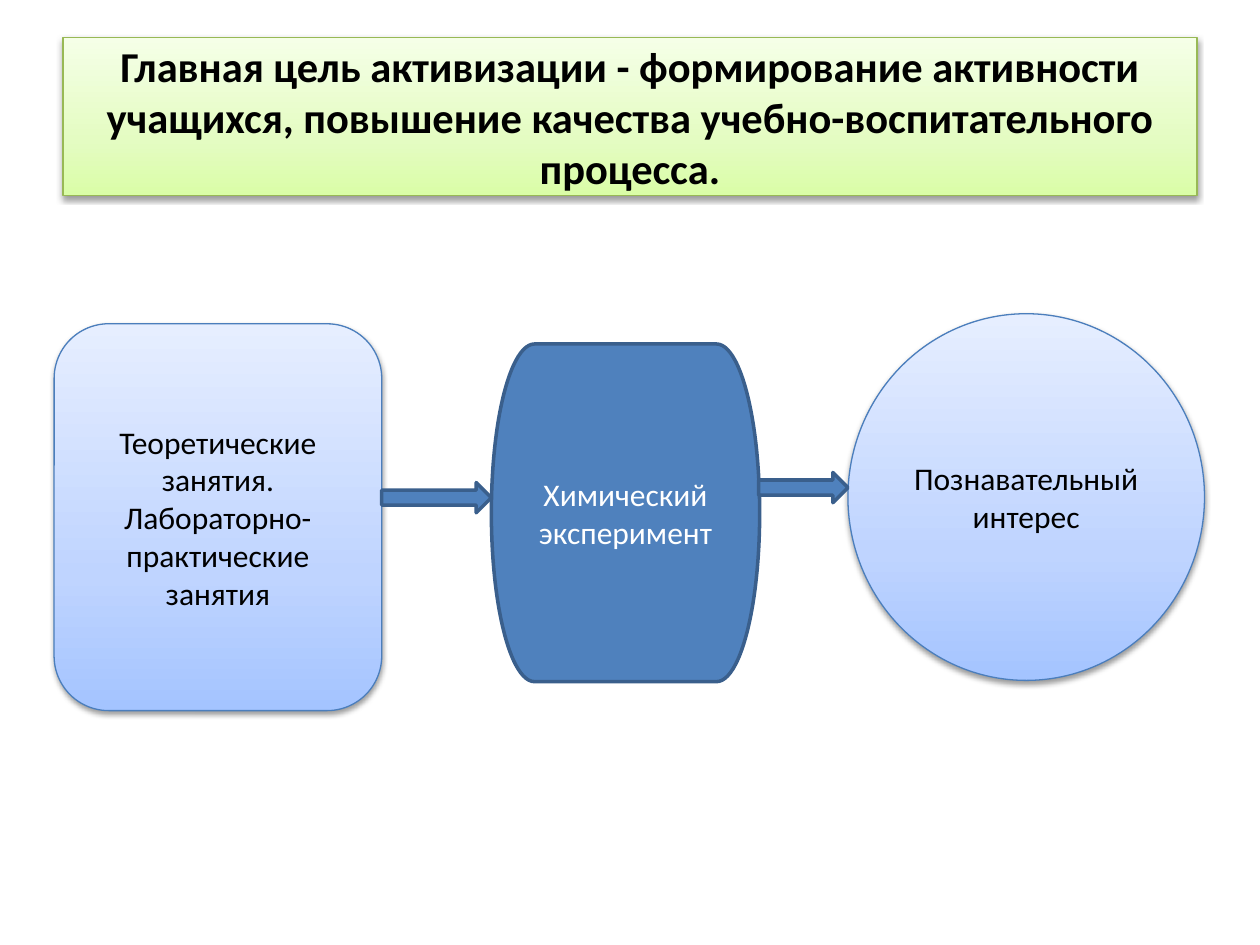
from lxml.etree import SubElement
from pptx import Presentation
from pptx.dml.color import RGBColor
from pptx.enum.shapes import MSO_SHAPE as SHAPE
from pptx.enum.text import MSO_ANCHOR, MSO_AUTO_SIZE, PP_ALIGN
from pptx.oxml.ns import qn
from pptx.util import Inches, Pt

COLORS = {
    "black": "000000", "white": "FFFFFF",
    "blue": "4F81BD", "blue_edge": "3A5F8C",
    "soft_edge": "4B7EBC", "green_edge": "98B955",
}
# Gradient stops, from the bottom edge to the top
GRADIENTS = {
    "blue": ((0, "A4C4FF"), (35, "BFD4FF"), (100, "E6EEFF")),
    "green": ((0, "DAFDA7"), (35, "E4FCC2"), (100, "F5FFE7")),
}


def rgb(name):
    return RGBColor.from_string(COLORS[name])


def set_line(sp, color, width):
    sp.line.color.rgb = rgb(color)
    sp.line.width = Pt(width)


def style_solid(sp):
    sp.shadow.inherit = False
    sp.fill.solid()
    sp.fill.fore_color.rgb = rgb("blue")
    set_line(sp, "blue_edge", 2)


def style_gradient(sp, gradient, edge):
    sp.fill.gradient()
    sp.fill.gradient_angle = 90
    set_line(sp, edge, 0.75)
    # Three gradient stops
    stops = sp._element.spPr.find(".//" + qn("a:gsLst"))
    for stop in list(stops):
        stops.remove(stop)
    for pos, color in GRADIENTS[gradient]:
        stop = SubElement(stops, qn("a:gs"), pos=str(pos * 1000))
        SubElement(stop, qn("a:srgbClr"), val=color)
    # Soft shadow straight below
    sp.shadow.inherit = False
    effects = sp._element.spPr.find(qn("a:effectLst"))
    shadow = SubElement(effects, qn("a:outerShdw"), blurRad=str(Pt(3.1)),
                        dist=str(Pt(1.6)), dir="5400000", rotWithShape="0")
    color = SubElement(shadow, qn("a:srgbClr"), val=COLORS["black"])
    SubElement(color, qn("a:alpha"), val="38000")


def set_text(sp, text, size=18, color="black", bold=False):
    tf = sp.text_frame
    tf.word_wrap = True
    tf.auto_size = MSO_AUTO_SIZE.NONE
    tf.vertical_anchor = MSO_ANCHOR.MIDDLE
    p = tf.paragraphs[0]
    p.alignment = PP_ALIGN.CENTER
    r = p.add_run()
    r.text = text
    r.font.name = "Calibri"
    r.font.size = Pt(size)
    r.font.bold = bold
    r.font.color.rgb = rgb(color)


def add_shape(slide, kind, *box):
    return slide.shapes.add_shape(kind, *map(Inches, box))


def add_soft_shape(slide, kind, box, text):
    sp = add_shape(slide, kind, *box)
    style_gradient(sp, "blue", "soft_edge")
    set_text(sp, text)


def add_arrow(slide, left, top, width):
    style_solid(add_shape(slide, SHAPE.RIGHT_ARROW, left, top, width, 0.24))


def set_title(slide, text):
    sp = slide.shapes.title
    sp.left, sp.top, sp.width, sp.height = map(Inches, (0.5, 0.3, 9, 1.25))
    style_gradient(sp, "green", "green_edge")
    set_text(sp, text, size=24.3, bold=True)


def main():
    prs = Presentation()
    prs.slide_width, prs.slide_height = Inches(10), Inches(7.5)
    slide = prs.slides.add_slide(prs.slide_layouts[5])

    set_title(slide, "Главная цель активизации - формирование активности "
                     "учащихся, повышение качества учебно-воспитательного "
                     "процесса.")

    # Lessons and the resulting interest
    add_soft_shape(slide, SHAPE.ROUNDED_RECTANGLE, (0.43, 2.57, 2.6, 3.07),
                   "Теоретические занятия. Лабораторно-практические занятия")
    add_soft_shape(slide, SHAPE.OVAL, (6.73, 2.49, 2.83, 2.91),
                   "Познавательный интерес")

    # Experiment between them
    experiment = add_shape(slide, SHAPE.FLOWCHART_TERMINATOR,
                           3.9, 2.73, 2.13, 2.68)
    style_solid(experiment)
    set_text(experiment, "Химический эксперимент", color="white")

    # Arrows joining the steps
    add_arrow(slide, 3.03, 3.83, 0.87)
    add_arrow(slide, 6.02, 3.75, 0.71)

    prs.save("out.pptx")


if __name__ == "__main__":
    main()
